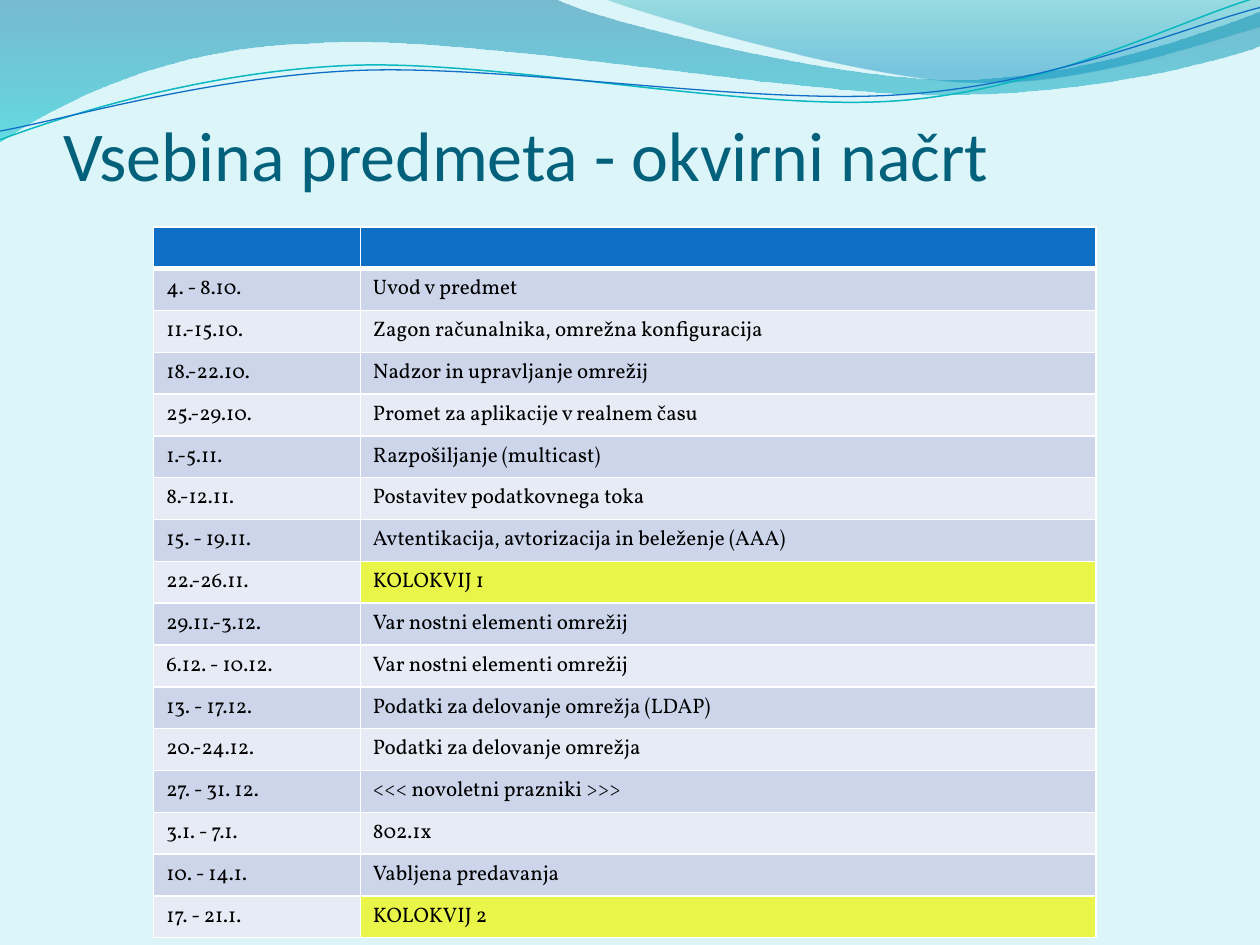
import pptx
import pptx.dml.color
import pptx.enum.text
import pptx.oxml
import pptx.oxml.ns
import pptx.util
from pptx.util import Inches

COLORS = {
    "background": "DBF5F9", "title": "04617B", "text": "000000",
    "header": "0F6FC6", "odd": "CCD5EA", "even": "E7EBF5",
    "exam": "E9F549", "border": "FFFFFF",
}
RGB = pptx.dml.color.RGBColor.from_string

# Each wave: start point, then segments of one point (line) or three (Bezier curve)
BANDS = [
    {"start": (0, 0),
     "segments": [[(4.4, -0.01)],
                  [(4.76, 0.17), (6.64, 0.63), (7.58, 0.63)],
                  [(8.53, 0.63), (9.58, 0.26), (10, 0.09)],
                  [(10.01, 0.36)],
                  [(9.83, 0.44), (8.7, 0.76), (7.46, 0.75)],
                  [(6.22, 0.75), (3.82, 0.28), (2.57, 0.34)],
                  [(1.29, 0.36), (0.46, 0.83), (-0.01, 1.13)],
                  [(0, 0)]],
     "stops": [(0, "0074A1", 45), (1, "00C6CF", 55)]},
    {"start": (4.79, -0.01),
     "segments": [[(5.09, 0.11), (6.82, 0.62), (7.69, 0.65)],
                  [(8.56, 0.69), (9.61, 0.32), (10, 0.21)],
                  [(10, 0)],
                  [(4.79, -0.01)]],
     "stops": [(0, "00A1A9", 30), (0.8, "008BBF", 45)]},
]
LINES = [
    {"start": (0, 1.11),
     "segments": [[(0.48, 0.93), (1.58, 0.57), (2.77, 0.52)],
                  [(3.95, 0.47), (5.93, 0.89), (7.13, 0.8)],
                  [(8.33, 0.71), (9.38, 0.15), (9.98, -0.02)]],
     "color": "0AB8BF", "width": 0.85},
    {"start": (0, 1.04),
     "segments": [[(0.47, 0.96), (1.64, 0.61), (2.83, 0.56)],
                  [(4.03, 0.51), (5.97, 0.84), (7.17, 0.75)],
                  [(8.36, 0.67), (9.41, 0.21), (10, 0.06)]],
     "color": "0F6FC6", "width": 0.75},
]
SCHEDULE = [
    ("", ""),
    ("4. - 8.10.", "Uvod v predmet"),
    ("11.-15.10.", "Zagon računalnika, omrežna konfiguracija"),
    ("18.-22.10.", "Nadzor in upravljanje omrežij"),
    ("25.-29.10.", "Promet za aplikacije v realnem času"),
    ("1.-5.11.", "Razpošiljanje (multicast)"),
    ("8.-12.11.", "Postavitev podatkovnega toka"),
    ("15. - 19.11.", "Avtentikacija, avtorizacija in beleženje (AAA)"),
    ("22.-26.11.", "KOLOKVIJ 1"),
    ("29.11.-3.12.", "Var nostni elementi omrežij"),
    ("6.12. - 10.12.", "Var nostni elementi omrežij"),
    ("13. - 17.12.", "Podatki za delovanje omrežja (LDAP)"),
    ("20.-24.12.", "Podatki za delovanje omrežja"),
    ("27. - 31. 12.", "<<< novoletni prazniki >>>"),
    ("3.1. - 7.1.", "802.1x"),
    ("10. - 14.1.", "Vabljena predavanja"),
    ("17. - 21.1.", "KOLOKVIJ 2"),
]


def add_wave(slide, wave, close):
    """Draw a wave as a freeform, joining each three points into a Bezier curve."""
    corners = [(Inches(x), Inches(y)) for segment in wave["segments"] for x, y in segment]
    builder = slide.shapes.build_freeform(*map(Inches, wave["start"]))
    builder.add_line_segments(corners, close=close)
    shape = builder.convert_to_shape()
    shape.shadow.inherit = False
    steps = iter(list(shape._element.iter(pptx.oxml.ns.qn("a:lnTo"))))
    for segment in wave["segments"]:
        lines = [next(steps) for point in segment]
        if len(lines) == 3:
            curve = pptx.oxml.parse_xml(f'<a:cubicBezTo {pptx.oxml.ns.nsdecls("a")}/>')
            lines[0].addprevious(curve)
            for line in lines:
                curve.append(line[0])
                line.getparent().remove(line)
    return shape


def add_borders(cell, bottom_width):
    """Give a cell white 1 pt borders, with its own bottom width in points."""
    properties = cell._tc.get_or_add_tcPr()
    for index, (side, width) in enumerate(zip("LRTB", (1, 1, 1, bottom_width))):
        properties.insert(index, pptx.oxml.parse_xml(
            f'<a:ln{side} {pptx.oxml.ns.nsdecls("a")} w="{pptx.util.Pt(width)}"><a:solidFill>'
            f'<a:srgbClr val="{COLORS["border"]}"/></a:solidFill></a:ln{side}>'))


presentation = pptx.Presentation()
presentation.slide_width = Inches(10)
presentation.slide_height = Inches(7.5)
slide = presentation.slides.add_slide(presentation.slide_layouts[5])
slide.background.fill.solid()
slide.background.fill.fore_color.rgb = RGB(COLORS["background"])

# Waves along the top
for band in BANDS:
    shape = add_wave(slide, band, close=True)
    shape.line.fill.background()
    shape.fill.gradient()
    shape.fill.gradient_angle = 270
    for stop, (position, color, opacity) in zip(shape.fill.gradient_stops, band["stops"]):
        stop.position = position
        stop.color.rgb = RGB(color)
    color_elements = shape._element.spPr.iter(pptx.oxml.ns.qn("a:srgbClr"))
    for element, (position, color, opacity) in zip(list(color_elements), band["stops"]):
        element.append(pptx.oxml.parse_xml(
            f'<a:alpha {pptx.oxml.ns.nsdecls("a")} val="{opacity * 1000}"/>'))

for line in LINES:
    shape = add_wave(slide, line, close=False)
    shape.fill.background()
    shape.line.color.rgb = RGB(line["color"])
    shape.line.width = pptx.util.Pt(line["width"])

# Title, brought in front of the waves
title = slide.shapes.title
slide.shapes._spTree.append(title._element)
title.left, title.top, title.width, title.height = map(Inches, (0.5, 0.76, 9, 0.79))
frame = title.text_frame
frame.text = "Vsebina predmeta - okvirni načrt"
frame.auto_size = pptx.enum.text.MSO_AUTO_SIZE.NONE
frame.vertical_anchor = pptx.enum.text.MSO_ANCHOR.BOTTOM
frame.margin_left = frame.margin_right = frame.margin_bottom = 0
frame.margin_top = Inches(0.05)
paragraph = frame.paragraphs[0]
paragraph.alignment = pptx.enum.text.PP_ALIGN.LEFT
paragraph.font.name = "Calibri"
paragraph.font.size = pptx.util.Pt(40)
paragraph.font.color.rgb = RGB(COLORS["title"])

# Schedule
row_height = 0.24
table = slide.shapes.add_table(len(SCHEDULE), 2, Inches(1.22), Inches(1.8), Inches(7.48),
                               Inches(row_height * len(SCHEDULE))).table
table.columns[0].width = Inches(1.64)
table.columns[1].width = Inches(5.84)
for row, texts in enumerate(SCHEDULE):
    table.rows[row].height = Inches(row_height)
    for column, text in enumerate(texts):
        cell = table.cell(row, column)
        cell.text = text
        font = cell.text_frame.paragraphs[0].font
        font.name = "Vollkorn"
        font.size = pptx.util.Pt(12)
        font.color.rgb = RGB(COLORS["text"])
        if row == 0:
            fill = "header"
        elif text.startswith("KOLOKVIJ"):
            fill = "exam"
        else:
            fill = "odd" if row % 2 else "even"
        cell.fill.solid()
        cell.fill.fore_color.rgb = RGB(COLORS[fill])
        add_borders(cell, bottom_width=3 if row == 0 else 1)

presentation.save("out.pptx")
